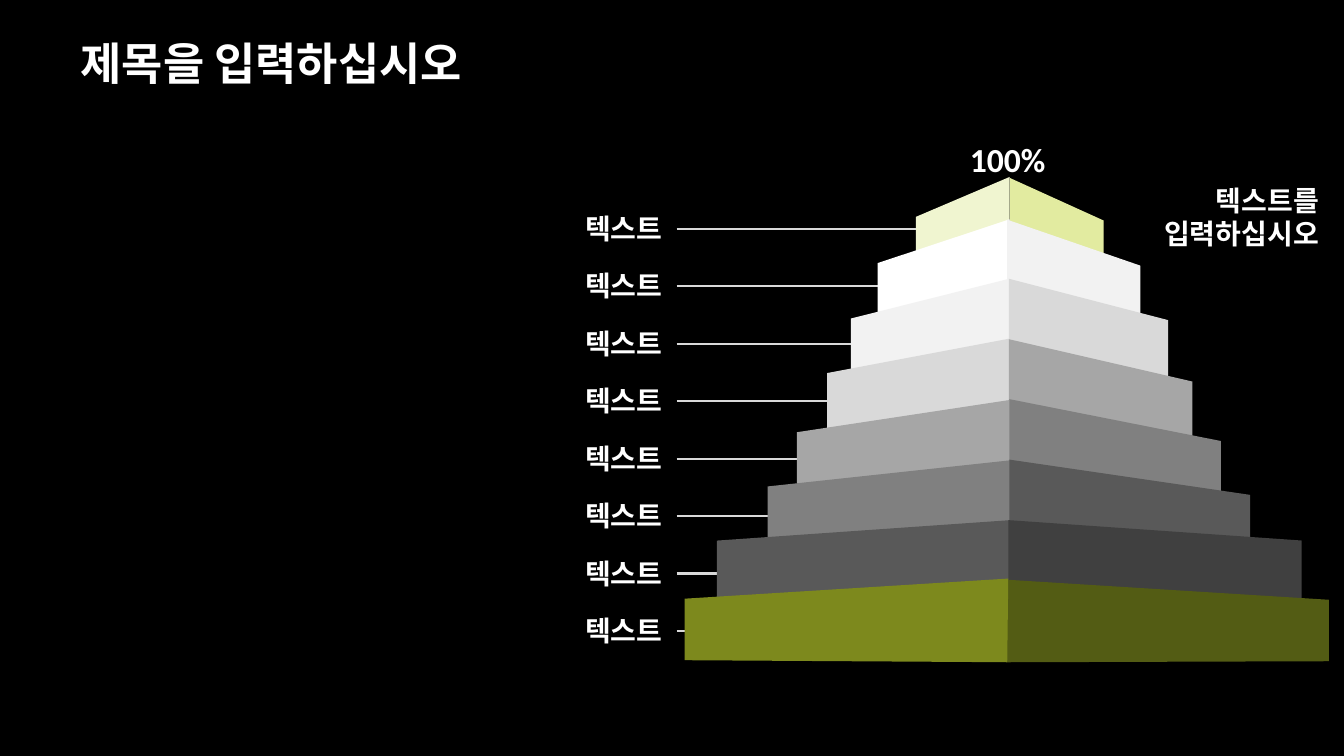
from lxml.etree import SubElement
from pptx import Presentation
from pptx.dml.color import RGBColor
from pptx.enum.shapes import MSO_CONNECTOR, MSO_SHAPE
from pptx.enum.text import MSO_ANCHOR, MSO_AUTO_SIZE, PP_ALIGN
from pptx.oxml.ns import qn
from pptx.util import Inches, Pt

BLACK = RGBColor(0x00, 0x00, 0x00)
WHITE = RGBColor(0xFF, 0xFF, 0xFF)
PALE_LIME = RGBColor(0xF0, 0xF5, 0xD0)
LIME = RGBColor(0xE2, 0xEB, 0xA0)
OLIVE = RGBColor(0x7D, 0x89, 0x1D)
DARK_OLIVE = RGBColor(0x53, 0x5C, 0x14)
GRAY_95 = RGBColor(0xF2, 0xF2, 0xF2)
GRAY_85 = RGBColor(0xD9, 0xD9, 0xD9)
GRAY_65 = RGBColor(0xA6, 0xA6, 0xA6)
GRAY_50 = RGBColor(0x80, 0x80, 0x80)
GRAY_35 = RGBColor(0x59, 0x59, 0x59)
GRAY_25 = RGBColor(0x40, 0x40, 0x40)

FONT = "Calibri"
TITLE = "제목을 입력하십시오"
TOP_LABEL = "100%"
SIDE_NOTE = "텍스트를\n입력하십시오"
LEVEL_LABELS = ["텍스트"] * 8

# Ends of the leader lines, from the top level down
LEADER_ENDS = [9.97, 9.63, 9.25, 9.01, 8.72, 8.43, 7.93, 7.63]
LEADER_LEFT, LEADER_TOP = 6.71, 2.27
LABEL_LEFT, LABEL_TOP = 5.63, 1.88
LEVEL_PITCH = 0.57

# Each tier: left face, right face as (left, top, width, height, slant, colour) before rotation
TIERS = [
    ((9.11, 1.73, 0.88, 0.93, 0.45, PALE_LIME), (10.04, 1.74, 0.88, 0.93, 0.48, LIME)),
    ((8.83, 2.05, 1.06, 1.31, 0.41, WHITE), (10.12, 2.05, 1.06, 1.32, 0.43, GRAY_95)),
    ((8.68, 2.52, 1.11, 1.59, 0.36, GRAY_95), (10.24, 2.53, 1.11, 1.58, 0.37, GRAY_85)),
    ((8.64, 2.92, 0.96, 1.83, 0.36, GRAY_85), (10.39, 2.98, 1.05, 1.82, 0.4, GRAY_65)),
    ((8.45, 3.42, 1.04, 2.13, 0.31, GRAY_65), (10.54, 3.43, 1.04, 2.1, 0.4, GRAY_50)),
    ((8.36, 3.82, 0.93, 2.42, 0.28, GRAY_50), (10.69, 3.88, 1.03, 2.39, 0.34, GRAY_35)),
    ((8.16, 4.11, 0.81, 2.91, 0.25, GRAY_35), (11.05, 4.11, 0.81, 2.91, 0.25, GRAY_25)),
]
BASE_FACES = [
    ([(9.97, 5.75), (13.18, 5.95), (13.18, 6.56), (9.98, 6.57)], DARK_OLIVE),
    ([(10, 5.74), (6.79, 5.94), (6.79, 6.55), (9.99, 6.57)], OLIVE),
]


def paint(shape, color):
    shape.shadow.inherit = False
    shape.fill.solid()
    shape.fill.fore_color.rgb = color
    shape.line.fill.background()


def add_face(shapes, face, mirrored):
    *box, slant, color = face
    shape = shapes.add_shape(MSO_SHAPE.PARALLELOGRAM, *map(Inches, box))
    shape.adjustments[0] = slant
    shape.rotation = 90
    if mirrored:
        shape.element.spPr.get_or_add_xfrm().set("flipH", "1")
    paint(shape, color)


def add_base_face(shapes, points, color):
    corners = [(Inches(x), Inches(y)) for x, y in points]
    builder = shapes.build_freeform(*corners[0])
    builder.add_line_segments(corners[1:], close=True)
    paint(builder.convert_to_shape(), color)


def add_leader(shapes, y, end):
    line = shapes.add_connector(
        MSO_CONNECTOR.STRAIGHT, Inches(LEADER_LEFT), Inches(y), Inches(end), Inches(y))
    line.line.color.rgb = GRAY_85
    line.line.width = Pt(1.5)
    SubElement(line.element.spPr, qn("a:effectLst"))


def write(text_frame, text, size, align, spacing):
    text_frame.text = text
    for paragraph in text_frame.paragraphs:
        paragraph.alignment = align
        paragraph.line_spacing = spacing
        for run in paragraph.runs:
            run.font.name = FONT
            run.font.size = Pt(size)
            run.font.bold = True
            run.font.color.rgb = WHITE


def add_text(shapes, box, text, size, align=PP_ALIGN.RIGHT, spacing=1.5):
    text_frame = shapes.add_textbox(*map(Inches, box)).text_frame
    text_frame.word_wrap = False
    text_frame.auto_size = MSO_AUTO_SIZE.SHAPE_TO_FIT_TEXT
    write(text_frame, text, size, align, spacing)


def main():
    presentation = Presentation()
    presentation.slide_width = Inches(13.33)
    presentation.slide_height = Inches(7.5)
    slide = presentation.slides.add_slide(presentation.slide_layouts[5])
    slide.background.fill.solid()
    slide.background.fill.fore_color.rgb = BLACK
    shapes = slide.shapes

    title = shapes.title
    title.left, title.top, title.width, title.height = map(Inches, (0.7, 0.2, 11.9, 0.9))
    title.text_frame.vertical_anchor = MSO_ANCHOR.MIDDLE
    write(title.text_frame, TITLE, 32, PP_ALIGN.LEFT, 0.9)

    for level, end in enumerate(LEADER_ENDS):
        add_leader(shapes, LEADER_TOP + level * LEVEL_PITCH, end)

    for left_face, right_face in TIERS:
        tier = shapes.add_group_shape().shapes
        add_face(tier, left_face, mirrored=True)
        add_face(tier, right_face, mirrored=False)
    base = shapes.add_group_shape().shapes
    for points, color in BASE_FACES:
        add_base_face(base, points, color)

    add_text(shapes, (9.52, 1.13, 0.96, 0.64), TOP_LABEL, 24, PP_ALIGN.LEFT)
    for level, label in enumerate(LEVEL_LABELS):
        add_text(shapes, (LABEL_LEFT, LABEL_TOP + level * LEVEL_PITCH, 1.04, 0.55), label, 20)
    add_text(shapes, (11.3, 1.77, 1.88, 0.77), SIDE_NOTE, 20, spacing=1.0)

    presentation.save("out.pptx")


if __name__ == "__main__":
    main()
